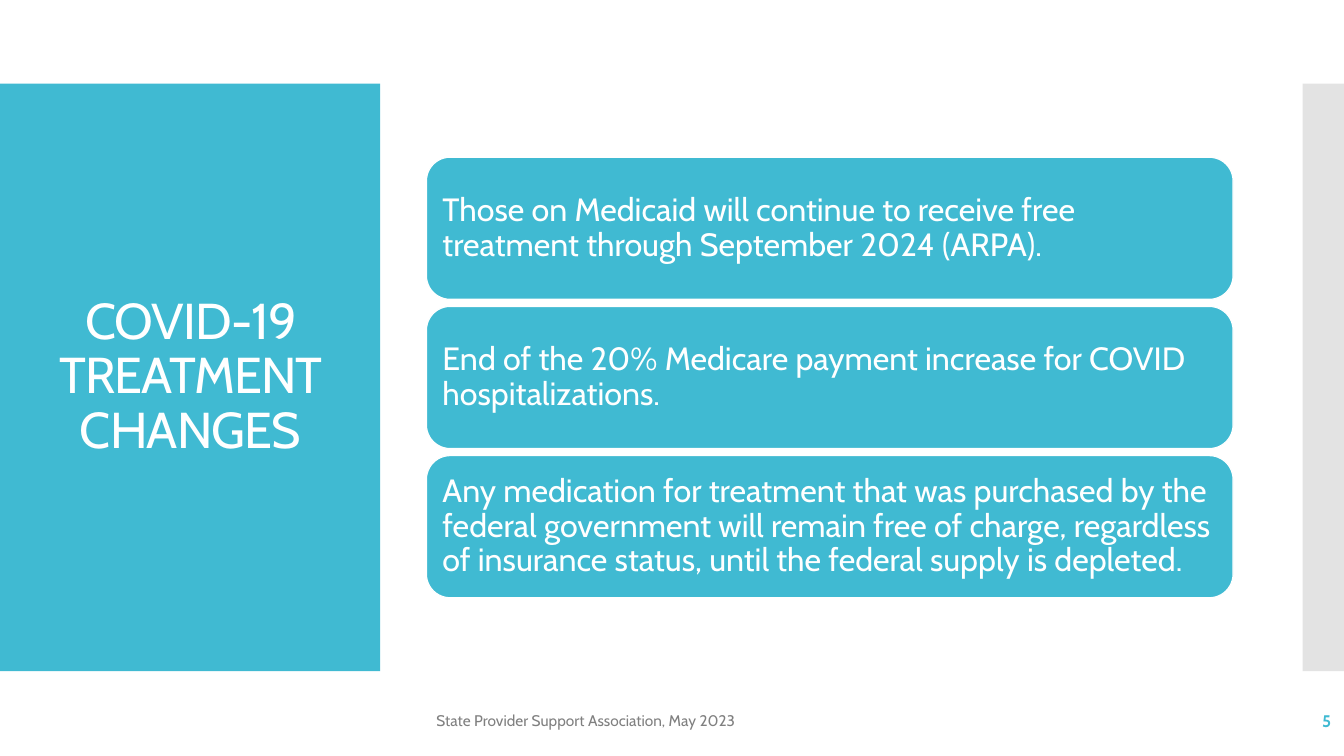
"""Build the COVID-19 treatment changes slide."""
from dataclasses import dataclass

from lxml.etree import SubElement
from pptx import Presentation
from pptx.dml.color import RGBColor
from pptx.enum.shapes import MSO_SHAPE
from pptx.enum.text import MSO_ANCHOR, MSO_AUTO_SIZE, PP_ALIGN
from pptx.oxml.ns import qn
from pptx.shapes.autoshape import Shape
from pptx.slide import Slide
from pptx.util import Inches, Pt


@dataclass(frozen=True)
class Theme:
    font: str = "Cabin"
    accent: str = "40BAD2"
    white: str = "FFFFFF"
    panel_gray: str = "C8C8C8"
    footer_gray: str = "808080"
    title_size: float = 36
    card_size: float = 23
    footer_size: float = 11
    number_size: float = 12


@dataclass(frozen=True)
class Box:
    left: float
    top: float
    width: float
    height: float

    def lengths(self) -> list[Inches]:
        return [Inches(v) for v in (self.left, self.top, self.width, self.height)]


@dataclass(frozen=True)
class Panel:
    box: Box
    color: str
    opacity: int


@dataclass(frozen=True)
class Label:
    text: str
    box: Box
    size: float
    color: str
    alignment: PP_ALIGN
    bold: bool = False


THEME = Theme()
TITLE = "COVID-19 TREATMENT CHANGES"
TITLE_BOX = Box(0.28, 1.23, 3.22, 5.03)
PANELS = [
    Panel(Box(0, 0.83, 3.77, 5.83), THEME.accent, 100),
    Panel(Box(12.92, 0.83, 0.42, 5.83), THEME.panel_gray, 50),
]
CHANGES = [
    "Those on Medicaid will continue to receive free treatment through September 2024 (ARPA).",
    "End of the 20% Medicare payment increase for COVID hospitalizations.",
    "Any medication for treatment that was purchased by the federal government will remain "
    "free of charge, regardless of insurance status, until the federal supply is depleted.",
]
FIRST_CARD = Box(4.23, 1.56, 8, 1.41)
CARD_PITCH = 1.48
CARD_INSET = 0.09
LABELS = [
    Label("State Provider Support Association, May 2023", Box(4.23, 6.95, 6.46, 0.4),
          THEME.footer_size, THEME.footer_gray, PP_ALIGN.LEFT),
    Label("5", Box(11.63, 6.95, 1.67, 0.4),
          THEME.number_size, THEME.accent, PP_ALIGN.RIGHT, bold=True),
]


def write_text(shape: Shape, text: str, size: float, color: str,
               alignment: PP_ALIGN, line_spacing: float = 1.0, bold: bool = False) -> None:
    frame = shape.text_frame
    frame.text = text
    frame.word_wrap = True
    frame.auto_size = MSO_AUTO_SIZE.NONE
    frame.vertical_anchor = MSO_ANCHOR.MIDDLE
    paragraph = frame.paragraphs[0]
    paragraph.alignment = alignment
    paragraph.line_spacing = line_spacing
    paragraph.font.name = THEME.font
    paragraph.font.size = Pt(size)
    paragraph.font.bold = bold
    paragraph.font.color.rgb = RGBColor.from_string(color)


def add_filled_shape(slide: Slide, kind: MSO_SHAPE, box: Box, color: str) -> Shape:
    shape = slide.shapes.add_shape(kind, *box.lengths())
    shape.shadow.inherit = False
    shape.fill.solid()
    shape.fill.fore_color.rgb = RGBColor.from_string(color)
    shape.line.fill.background()
    return shape


def add_panel(slide: Slide, panel: Panel) -> None:
    shape = add_filled_shape(slide, MSO_SHAPE.RECTANGLE, panel.box, panel.color)
    if panel.opacity < 100:
        color = shape.element.spPr.find(qn("a:solidFill")).find(qn("a:srgbClr"))
        SubElement(color, qn("a:alpha")).set("val", str(panel.opacity * 1000))
    slide.shapes.title.element.addprevious(shape.element)


def add_title(slide: Slide) -> None:
    title = slide.shapes.title
    title.left, title.top, title.width, title.height = TITLE_BOX.lengths()
    write_text(title, TITLE, THEME.title_size, THEME.white, PP_ALIGN.CENTER, 0.9)
    title.text_frame.paragraphs[0].runs[0].font._element.set("spc", "-60")


def add_card(slide: Slide, index: int, text: str) -> None:
    first = FIRST_CARD
    box = Box(first.left, first.top + index * CARD_PITCH, first.width, first.height)
    card = add_filled_shape(slide, MSO_SHAPE.ROUNDED_RECTANGLE, box, THEME.accent)
    card.line.color.rgb = RGBColor.from_string(THEME.white)
    card.line.width = Pt(0.85)
    frame = card.text_frame
    frame.margin_left = frame.margin_right = Inches(CARD_INSET)
    frame.margin_top = frame.margin_bottom = Inches(CARD_INSET)
    write_text(card, text, THEME.card_size, THEME.white, PP_ALIGN.LEFT, 0.9)


def add_label(slide: Slide, label: Label) -> None:
    text_box = slide.shapes.add_textbox(*label.box.lengths())
    write_text(text_box, label.text, label.size, label.color, label.alignment, bold=label.bold)


def main() -> None:
    presentation = Presentation()
    presentation.slide_width = Inches(13.33)
    presentation.slide_height = Inches(7.5)
    slide = presentation.slides.add_slide(presentation.slide_layouts[5])
    for panel in PANELS:
        add_panel(slide, panel)
    add_title(slide)
    for index, change in enumerate(CHANGES):
        add_card(slide, index, change)
    for label in LABELS:
        add_label(slide, label)
    presentation.save("out.pptx")


if __name__ == "__main__":
    main()
